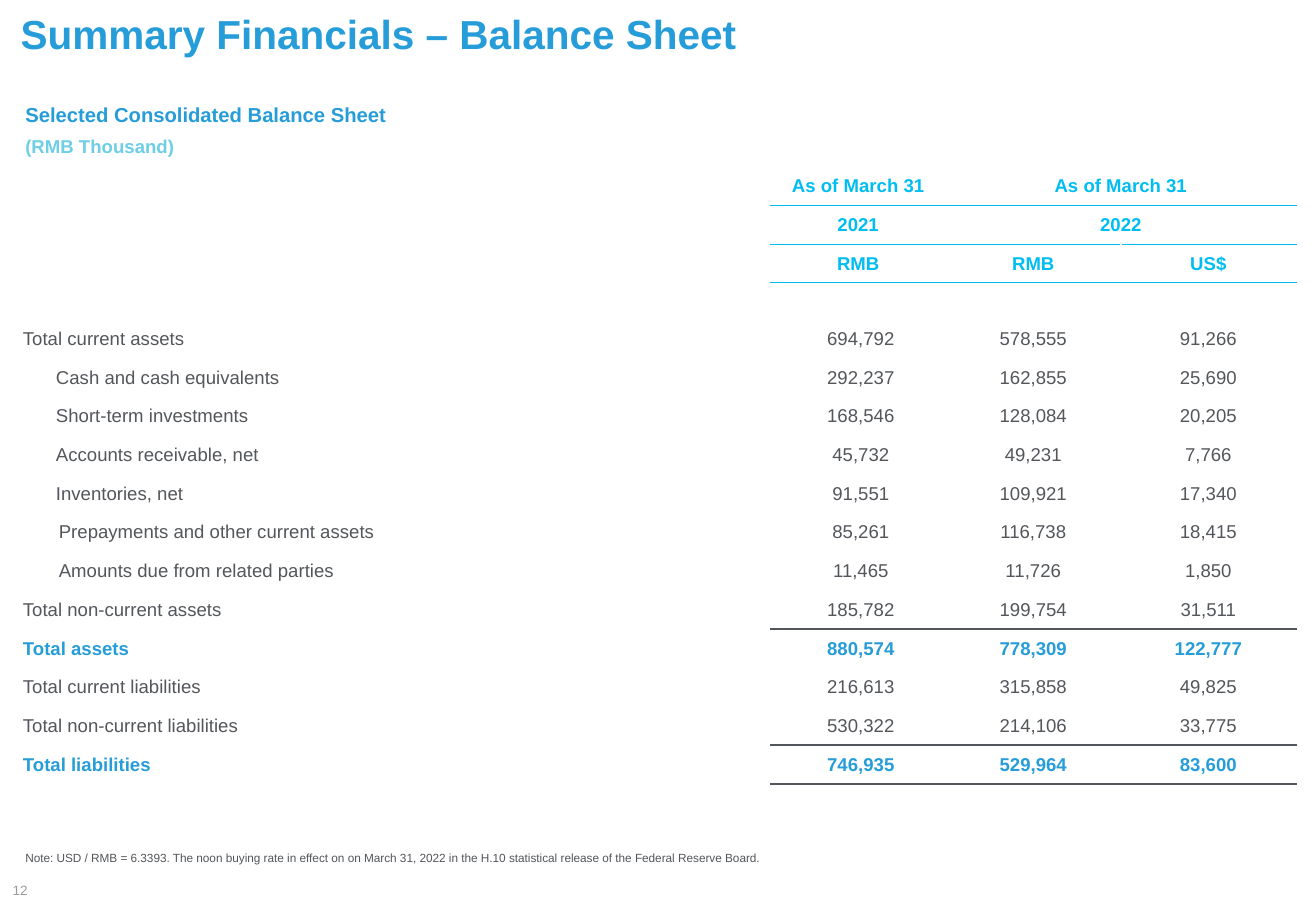
from lxml import etree
from pptx import Presentation
from pptx.dml.color import RGBColor
from pptx.enum.text import MSO_ANCHOR, PP_ALIGN
from pptx.oxml.ns import qn
from pptx.util import Cm, Pt

LEFT, CENTER, RIGHT = PP_ALIGN.LEFT, PP_ALIGN.CENTER, PP_ALIGN.RIGHT
TOP, MIDDLE = MSO_ANCHOR.TOP, MSO_ANCHOR.MIDDLE

BLUE = RGBColor(0x26, 0x9D, 0xD8)
PALE_BLUE = RGBColor(0x6D, 0xCE, 0xE5)
CYAN = RGBColor(0x00, 0xBD, 0xF2)
DARK_GREY = RGBColor(0x53, 0x56, 0x5A)
LIGHT_GREY = RGBColor(0x99, 0x9A, 0x9B)
FONT = "Arial"

# Content
TITLE = "Summary Financials – Balance Sheet"
# text, left, top, width, height (cm), size, colour, bold, alignment, anchor
NOTES = [
    ("Selected Consolidated Balance Sheet", 0.53, 2.13, 8.64, 0.51, 12, BLUE, True, LEFT, TOP),
    ("(RMB Thousand)", 0.53, 2.82, 3.5, 0.48, 11, PALE_BLUE, True, LEFT, TOP),
    ("12", 0, 18.41, 0.58, 0.41, 8, LIGHT_GREY, False, RIGHT, MIDDLE),
    ("Note: USD / RMB = 6.3393. The noon buying rate in effect on on March 31, 2022 "
     "in the H.10 statistical release of the Federal Reserve Board.",
     0.53, 17.78, 23.29, 0.3, 7, DARK_GREY, False, LEFT, TOP),
]
HEADERS = [
    ("", "As of March 31", "As of March 31", ""),
    ("", "2021", "2022", ""),
    ("", "RMB", "RMB", "US$"),
    ("", "", "", ""),
]
# label indent (cm), label, RMB 2021, RMB 2022, US$ 2022
ITEMS = [
    (0, "Total current assets", "694,792", "578,555", "91,266"),
    (0.69, "Cash and cash equivalents", "292,237", "162,855", "25,690"),
    (0.69, "Short-term investments", "168,546", "128,084", "20,205"),
    (0.69, "Accounts receivable, net", "45,732", "49,231", "7,766"),
    (0.69, "Inventories, net", "91,551", "109,921", "17,340"),
    (0.75, "Prepayments and other current assets", "85,261", "116,738", "18,415"),
    (0.75, "Amounts due from related parties", "11,465", "11,726", "1,850"),
    (0, "Total non-current assets", "185,782", "199,754", "31,511"),
    (0, "Total assets", "880,574", "778,309", "122,777"),
    (0, "Total current liabilities", "216,613", "315,858", "49,825"),
    (0, "Total non-current liabilities", "530,322", "214,106", "33,775"),
    (0, "Total liabilities", "746,935", "529,964", "83,600"),
]
TOTALS = {"Total assets", "Total liabilities"}
MERGED_HEADER_ROWS = (0, 1)
COLUMN_WIDTHS = (15.65, 3.66, 3.66, 3.66)
ROW_HEIGHT, SPACER_HEIGHT = 0.81, 0.76
CELL_MARGIN, FIRST_YEAR_SHIFT = 0.02, 0.11
# rule below each row: colour, width in points
RULES = {row: (CYAN, 0.5) for row in (0, 1, 2)}
RULES.update({row: (DARK_GREY, 1) for row in (11, 14, 15)})


def add_text(para, text, size, color, bold, align):
    para.alignment = align
    span = para.add_run()
    span.text = text
    span.font.name = FONT
    span.font.size = Pt(size)
    span.font.bold = bold
    span.font.color.rgb = color


def set_frame(frame, anchor):
    frame.margin_left = frame.margin_right = 0
    frame.margin_top = frame.margin_bottom = 0
    frame.word_wrap = True
    frame.vertical_anchor = anchor


def add_border(cell, tag, rule):
    color, width = rule
    line = etree.SubElement(cell._tc.get_or_add_tcPr(), qn(tag), w=str(Pt(width)))
    fill = etree.SubElement(line, qn("a:solidFill"))
    etree.SubElement(fill, qn("a:srgbClr"), val=str(color))


def format_cell(cell, row, column):
    cell.margin_left = cell.margin_right = cell.margin_top = Cm(CELL_MARGIN)
    cell.margin_bottom = 0
    cell.vertical_anchor = MIDDLE
    if column:
        for tag, edge in (("a:lnT", row - 1), ("a:lnB", row)):
            if edge in RULES:
                add_border(cell, tag, RULES[edge])
    cell.fill.background()


deck = Presentation()
deck.slide_width, deck.slide_height = Cm(27.51), Cm(19.05)
page = deck.slides.add_slide(deck.slide_layouts[5])

# Title
title = page.shapes.title
title.left, title.top, title.width, title.height = Cm(0.43), Cm(0.18), Cm(26.67), Cm(1.02)
set_frame(title.text_frame, MIDDLE)
add_text(title.text_frame.paragraphs[0], TITLE, 24, BLUE, True, LEFT)

# Subtitles, page number and footnote
for text, left, top, width, height, size, color, bold, align, anchor in NOTES:
    box = page.shapes.add_textbox(Cm(left), Cm(top), Cm(width), Cm(height))
    set_frame(box.text_frame, anchor)
    add_text(box.text_frame.paragraphs[0], text, size, color, bold, align)

# Balance sheet table
rows = [(0, *header) for header in HEADERS] + ITEMS
spacer = len(HEADERS) - 1
heights = [SPACER_HEIGHT if row == spacer else ROW_HEIGHT for row in range(len(rows))]
table = page.shapes.add_table(len(rows), len(COLUMN_WIDTHS), Cm(0.46), Cm(3.48),
                              Cm(sum(COLUMN_WIDTHS)), Cm(sum(heights))).table
table.first_row = table.horz_banding = False
for column, width in enumerate(COLUMN_WIDTHS):
    table.columns[column].width = Cm(width)

for row, (indent, *texts) in enumerate(rows):
    table.rows[row].height = Cm(heights[row])
    is_header = row < len(HEADERS)
    is_total = texts[0] in TOTALS
    color = CYAN if is_header else BLUE if is_total else DARK_GREY
    for column, text in enumerate(texts):
        cell = table.cell(row, column)
        format_cell(cell, row, column)
        para = cell.text_frame.paragraphs[0]
        if not text:
            etree.SubElement(para._p, qn("a:endParaRPr"), sz="1100")
            continue
        if column == 0:
            cell.margin_left = Cm(CELL_MARGIN + indent)
        elif column == 1 and not is_header:
            cell.margin_left = Cm(CELL_MARGIN + FIRST_YEAR_SHIFT)
        add_text(para, text, 11, color, is_header or is_total, CENTER if column else LEFT)

for row in MERGED_HEADER_ROWS:
    table.cell(row, 2).merge(table.cell(row, 3))

deck.save("out.pptx")
